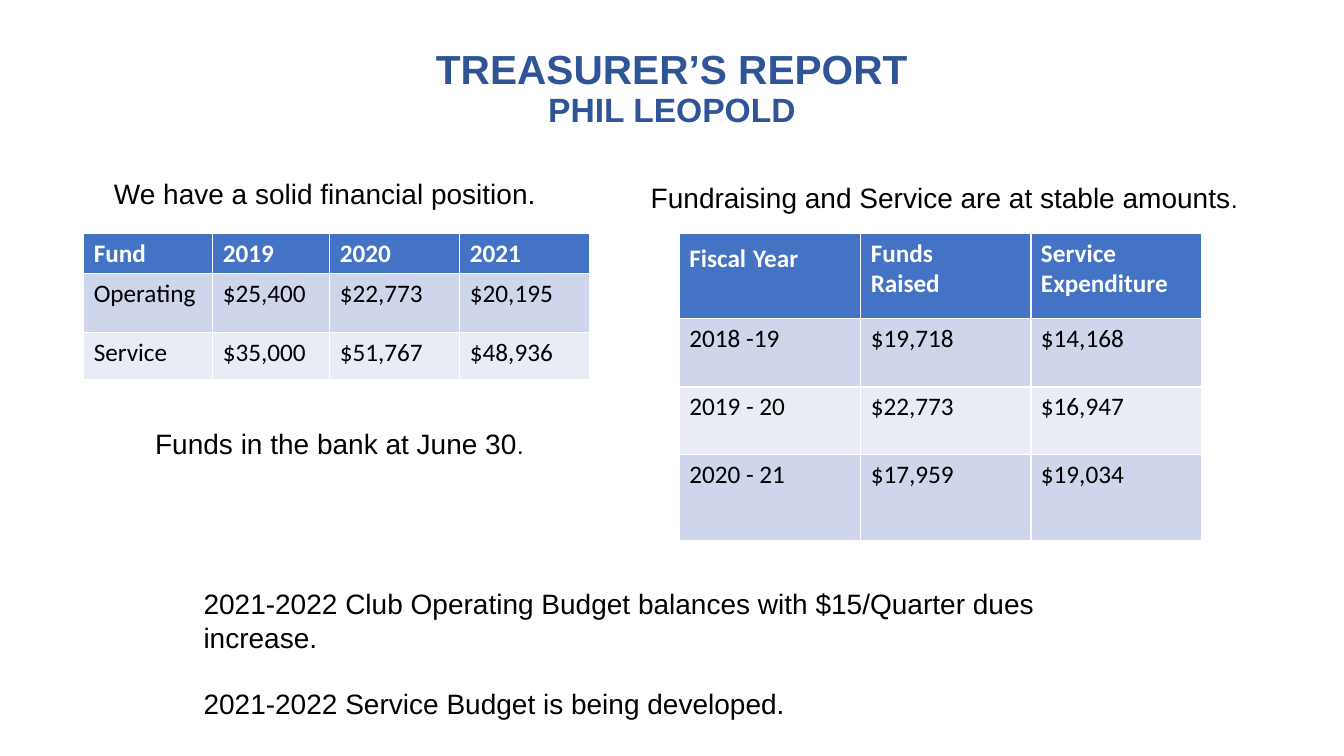
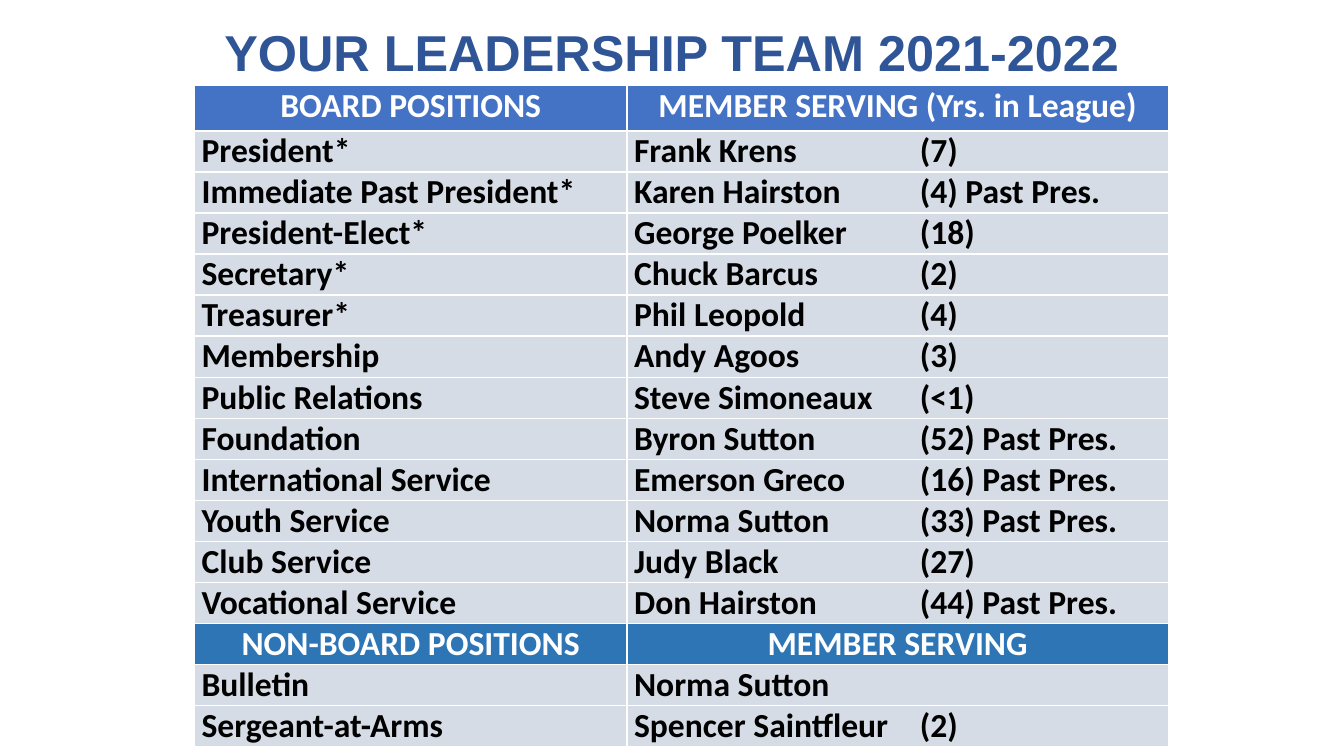
from pptx import Presentation
from pptx.dml.color import RGBColor
from pptx.enum import text
from pptx.oxml import parse_xml
from pptx.oxml.ns import nsdecls
from pptx.util import Cm, Pt

BLACK, WHITE = RGBColor(0, 0, 0), RGBColor(255, 255, 255)
TITLE_BLUE = RGBColor(0x2F, 0x55, 0x97)
HEAD_BLUE = RGBColor(0x44, 0x72, 0xC4)
SECTION_BLUE = RGBColor(0x2E, 0x75, 0xB6)
BANDS = [RGBColor(0xCF, 0xD5, 0xEA), RGBColor(0xE9, 0xEB, 0xF5)]
ROW_GREY = RGBColor(0xD6, 0xDC, 0xE5)
CENTER = text.PP_ALIGN.CENTER

# A paragraph is a string, or a list of (string, size) runs.
REPORT_TITLE = [("TREASURER’S REPORT", 29), ("\v", 29), ("PHIL LEOPOLD", 24)]
TEAM_TITLE = [("YOUR LEADERSHIP TEAM 2021-2022", 36)]

# left, top, width, height in cm, paragraphs
NOTES = [
    (2.62, 4.32, 11.15, 1.12, ["We have a solid financial position."]),
    (3.66, 10.62, 10.11, 1.12, [[("Funds in the bank at June 30", 20), (".", 18)]]),
    (16.15, 4.42, 15.42, 1.12,
     [[("Fundraising and Service are at stable amounts", 20), (".", 18)]]),
    (4.88, 14.66, 22.6, 3.66,
     ["2021-2022 Club Operating Budget balances with $15/Quarter dues increase.",
      "2021-2022 Service Budget is being developed."]),
]

FUND_TABLE = dict(
    left=2.11, top=5.87, widths=[3.25, 2.95, 3.28, 3.28], heights=[1.0, 1.5, 1.17],
    rows=[
        ["Fund", "2019", "2020", "2021"],
        ["Operating", "$25,400", "$22,773", "$20,195"],
        ["Service", "$35,000", "$51,767", "$48,936"],
    ])

YEAR_TABLE = dict(
    left=17.12, top=5.87, widths=[4.57, 4.29, 4.29], heights=[2.16, 1.72, 1.7, 2.16],
    rows=[
        [[("Fiscal", 18), (" ", 22), ("Year", 18)], "Funds\nRaised", "Service\nExpenditure"],
        ["2018 -19", "$19,718", "$14,168"],
        ["2019 - 20", "$22,773", "$16,947"],
        ["2020 - 21", "$17,959", "$19,034"],
    ])

BOARD_HEAD = ["BOARD POSITIONS", "MEMBER SERVING (Yrs. in League)"]
BOARD = [
    ["President*", "Frank Krens\t(7)"],
    ["Immediate Past President*", "Karen Hairston\t(4) Past Pres."],
    ["President-Elect*", "George Poelker\t(18)"],
    ["Secretary*", "Chuck Barcus\t(2)"],
    ["Treasurer*", "Phil Leopold\t(4)"],
    ["Membership", "Andy Agoos\t(3)"],
    ["Public Relations", "Steve Simoneaux\t(<1)"],
    ["Foundation", "Byron Sutton\t(52) Past Pres."],
    ["International Service", "Emerson Greco\t(16) Past Pres."],
    ["Youth Service", "Norma Sutton\t(33) Past Pres."],
    ["Club Service", "Judy Black\t(27)"],
    ["Vocational Service", "Don Hairston\t(44) Past Pres."],
]
NON_BOARD_HEAD = ["NON-BOARD POSITIONS", "MEMBER SERVING"]
NON_BOARD = [
    ["Bulletin", "Norma Sutton"],
    ["Sergeant-at-Arms", "Spencer Saintfleur\t(2)"],
]
TEAM_ROWS = [BOARD_HEAD, *BOARD, NON_BOARD_HEAD, *NON_BOARD]
TEAM_TABLE = dict(left=4.9, top=2.16, widths=[10.9, 13.64],
                  heights=[1.14] + [1.02] * (len(TEAM_ROWS) - 1), rows=TEAM_ROWS)
YEARS_TAB = Cm(7.2)


def write(tf, paragraphs, size, color, name="Arial", bold=False, **layout):
    """Fill a text frame; layout holds paragraph attributes."""
    for i, runs in enumerate(paragraphs):
        p = tf.add_paragraph() if i else tf.paragraphs[0]
        for key, value in layout.items():
            if i or key != "space_before":
                setattr(p, key, value)
        for words, points in ([(runs, size)] if isinstance(runs, str) else runs):
            if words == "\v":
                p.add_line_break()
                continue
            r = p.add_run()
            r.text = words
            r.font.color.rgb = color
            for key, value in dict(name=name, size=Pt(points), bold=bold).items():
                setattr(r.font, key, value)


def add_slide(prs, title, top, height):
    s = prs.slides.add_slide(prs.slide_layouts[5])
    sp = s.shapes.title
    sp.left, sp.top, sp.width, sp.height = Cm(2.33), Cm(top), Cm(29.21), Cm(height)
    tf = sp.text_frame
    tf.auto_size = text.MSO_AUTO_SIZE.NONE
    tf.vertical_anchor = text.MSO_ANCHOR.MIDDLE
    write(tf, [title], 36, TITLE_BLUE, bold=True, alignment=CENTER, line_spacing=0.9)
    return s


def add_grid(s, left, top, widths, heights, rows):
    """Add an empty table and yield row number, row content and cells."""
    table = s.shapes.add_table(len(rows), len(widths), Cm(left), Cm(top),
                               Cm(sum(widths)), Cm(sum(heights))).table
    for column, width in zip(table.columns, widths):
        column.width = Cm(width)
    for row, height in zip(table.rows, heights):
        row.height = Cm(height)
    for i, content in enumerate(rows):
        yield i, content, table.rows[i].cells


def fill_cell(cell, fill, content, **format_values):
    cell.fill.solid()
    cell.fill.fore_color.rgb = fill
    paragraphs = content.split("\n") if isinstance(content, str) else [content]
    write(cell.text_frame, paragraphs, name="Calibri", **format_values)


def add_money_table(s, spec):
    for i, content, cells in add_grid(s, **spec):
        fill = BANDS[(i - 1) % 2] if i else HEAD_BLUE
        for cell, words in zip(cells, content):
            fill_cell(cell, fill, words, size=18, color=BLACK if i else WHITE, bold=not i)


def add_team_table(s):
    heads = {0: HEAD_BLUE, TEAM_ROWS.index(NON_BOARD_HEAD): SECTION_BLUE}
    for i, content, cells in add_grid(s, **TEAM_TABLE):
        look = dict(color=WHITE, alignment=CENTER) if i in heads else dict(color=BLACK)
        for cell, words in zip(cells, content):
            cell.margin_left = cell.margin_right = Cm(0.18)
            cell.margin_top = cell.margin_bottom = 0
            if "\t" in words:
                cell.text_frame.paragraphs[0]._p.get_or_add_pPr().append(parse_xml(
                    f'<a:tabLst {nsdecls("a")}><a:tab pos="{YEARS_TAB}" algn="l"/></a:tabLst>'))
            fill_cell(cell, heads.get(i, ROW_GREY), words, size=24, bold=True, **look)


def main():
    prs = Presentation()
    prs.slide_width, prs.slide_height = Cm(33.87), Cm(19.05)

    s = add_slide(prs, REPORT_TITLE, 1.02, 2.46)
    for *box, paragraphs in NOTES:
        tf = s.shapes.add_textbox(*map(Cm, box)).text_frame
        tf.word_wrap = True
        write(tf, paragraphs, 20, BLACK, space_before=Pt(23))
    for spec in (FUND_TABLE, YEAR_TABLE):
        add_money_table(s, spec)

    s = add_slide(prs, TEAM_TITLE, 0.36, 2.06)
    add_team_table(s)
    prs.save("out.pptx")


if __name__ == "__main__":
    main()
